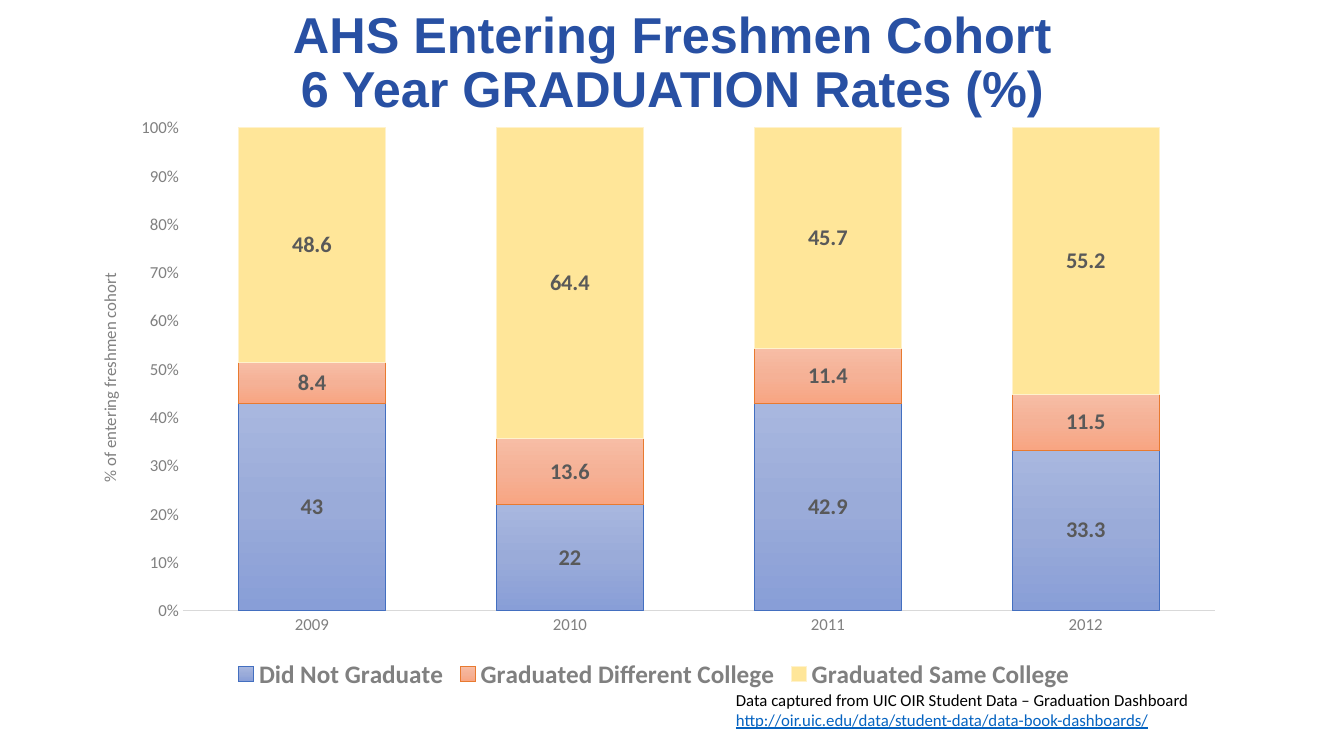
from lxml.etree import SubElement
from pptx import Presentation
from pptx.chart.data import CategoryChartData
from pptx.dml.color import RGBColor
from pptx.enum.chart import XL_CHART_TYPE, XL_LEGEND_POSITION, XL_TICK_MARK
from pptx.enum.text import MSO_ANCHOR, PP_ALIGN
from pptx.oxml.ns import qn
from pptx.util import Inches, Pt

NAVY = RGBColor(0x28, 0x50, 0xA3)
BLACK = RGBColor(0, 0, 0)
LINK = RGBColor(0x05, 0x63, 0xC1)
GRAY = RGBColor(0x80, 0x80, 0x80)
DARK = RGBColor(0x59, 0x59, 0x59)
PALE = RGBColor(0xD9, 0xD9, 0xD9)
BLUES = [RGBColor(0xA8, 0xB7, 0xDF), RGBColor(0x9A, 0xAB, 0xD9), RGBColor(0x88, 0x9E, 0xD7)]
CORALS = [RGBColor(0xF7, 0xBD, 0xA5), RGBColor(0xF5, 0xB1, 0x96), RGBColor(0xF8, 0xA5, 0x82)]
GOLDS = [RGBColor(0xFF, 0xE6, 0x99)]
BLUE = RGBColor(0x43, 0x6F, 0xC0)
CORAL = RGBColor(0xE8, 0x7A, 0x30)
CREAM = RGBColor(0xFF, 0xF2, 0xCC)

HEAD = dict(name="Arial", size=Pt(36), bold=True, color=NAVY)
AXIS = dict(name="Calibri", size=Pt(12), bold=False, color=GRAY)
KEY = dict(name="Calibri", size=Pt(18), bold=True, color=GRAY)
LABEL = dict(name="Calibri", size=Pt(16), bold=True, color=DARK)
NOTE = dict(name="Calibri", size=Pt(12), color=BLACK)
URL = dict(name="Calibri", size=Pt(12), color=LINK, underline=True)

YEARS = ["2009", "2010", "2011", "2012"]
GROUPS = [
    ("Did Not Graduate", [43, 22, 42.9, 33.3], BLUES, BLUE),
    ("Graduated Different College", [8.4, 13.6, 11.4, 11.5], CORALS, CORAL),
    ("Graduated Same College", [48.6, 64.4, 45.7, 55.2], GOLDS, CREAM),
]


def style(font, form):
    """Apply a dict of format values to a font."""
    for key, value in form.items():
        if key == "color":
            font.color.rgb = value
        else:
            setattr(font, key, value)


def place(shape, box):
    """Move a shape to a box given in inches."""
    for key, value in zip(("left", "top", "width", "height"), box):
        setattr(shape, key, Inches(value))


def paint(group, tints, edge):
    """Fill a series with one tint or a downward gradient, and outline it."""
    fill = group.format.fill
    if len(tints) == 1:
        fill.solid()
        fill.fore_color.rgb = tints[0]
    else:
        fill.gradient()
        fill.gradient_angle = 270
        stops = next(group._element.iter(qn("a:gsLst")))
        stops.clear()
        for i, tint in enumerate(tints):
            stop = SubElement(stops, qn("a:gs"), pos=str(100000 * i // (len(tints) - 1)))
            SubElement(stop, qn("a:srgbClr"), val=str(tint))
    group.format.line.color.rgb = edge
    group.format.line.width = Pt(0.75)


def arrange(parent, index, spots):
    """Give a chart part a manual layout as fractions of the chart."""
    for old in parent.findall(qn("c:layout")):
        parent.remove(old)
    layout = SubElement(parent, qn("c:layout"))
    manual = SubElement(layout, qn("c:manualLayout"))
    for key, value in spots.items():
        SubElement(manual, qn("c:" + key), val=str(value))
    parent.insert(index, layout)


def add_title(slide, box):
    """Put the heading in the title placeholder."""
    title = slide.shapes.title
    place(title, box)
    frame = title.text_frame
    frame.word_wrap = True
    frame.vertical_anchor = MSO_ANCHOR.MIDDLE
    frame.text = "AHS Entering Freshmen Cohort\v6 Year GRADUATION Rates (%)"
    line = frame.paragraphs[0]
    line.alignment = PP_ALIGN.CENTER
    line.line_spacing = 0.9
    for run in line.runs:
        style(run.font, HEAD)


def add_rates(slide, box):
    """Draw the stacked chart of graduation rates."""
    data = CategoryChartData()
    data.categories = YEARS
    for name, rates, _, _ in GROUPS:
        data.add_series(name, rates)
    kind = XL_CHART_TYPE.COLUMN_STACKED_100
    chart = slide.shapes.add_chart(kind, *map(Inches, box), data).chart
    style(chart.font, AXIS)
    chart.has_title = False
    chart.has_legend = True
    chart.legend.position = XL_LEGEND_POSITION.BOTTOM
    chart.legend.include_in_layout = False
    style(chart.legend.font, KEY)

    plot = chart.plots[0]
    plot.gap_width, plot.overlap = 75, 100
    plot.vary_by_categories = False
    for group, (_, _, tints, edge) in zip(plot.series, GROUPS):
        paint(group, tints, edge)
        group.data_labels.show_value = True
        style(group.data_labels.font, LABEL)

    years, rates = chart.category_axis, chart.value_axis
    for axis in (years, rates):
        axis.major_tick_mark = axis.minor_tick_mark = XL_TICK_MARK.NONE
        axis.has_major_gridlines = False
        style(axis.tick_labels.font, AXIS)
    years.format.line.color.rgb = PALE
    years.format.line.width = Pt(0.75)
    rates.format.line.fill.background()
    rates.tick_labels.number_format = "0%"
    rates.tick_labels.number_format_is_linked = False
    title = rates.axis_title
    title.text_frame.text = "% of entering freshmen cohort"
    style(title.text_frame.paragraphs[0].runs[0].font, AXIS)
    arrange(title._element, 1, dict(xMode="edge", yMode="edge", x=0.022, y=0.278))
    area = next(chart._chartSpace.iter(qn("c:plotArea")))
    arrange(area, 0, dict(layoutTarget="inner", xMode="edge", yMode="edge",
                          x=0.097, y=0.036, w=0.883, h=0.822))


def add_source(slide, box):
    """Write the data source with its web address."""
    frame = slide.shapes.add_textbox(*map(Inches, box)).text_frame
    frame.word_wrap = True
    parts = [
        ("Data captured from UIC OIR Student Data – Graduation Dashboard ", NOTE),
        ("http://oir.uic.edu/data/student-data/data-book-dashboards/", URL),
    ]
    for text, form in parts:
        run = frame.paragraphs[0].add_run()
        run.text = text
        style(run.font, form)


def main():
    """Build and save the slide."""
    deck = Presentation()
    deck.slide_width, deck.slide_height = Inches(13.33), Inches(7.5)
    slide = deck.slides.add_slide(deck.slide_layouts[5])
    add_title(slide, (0.92, -0.09, 11.5, 1.45))
    add_rates(slide, (0.69, 1.06, 11.59, 5.83))
    add_source(slide, (7.2, 6.79, 4.88, 0.71))
    deck.save("out.pptx")


if __name__ == "__main__":
    main()
